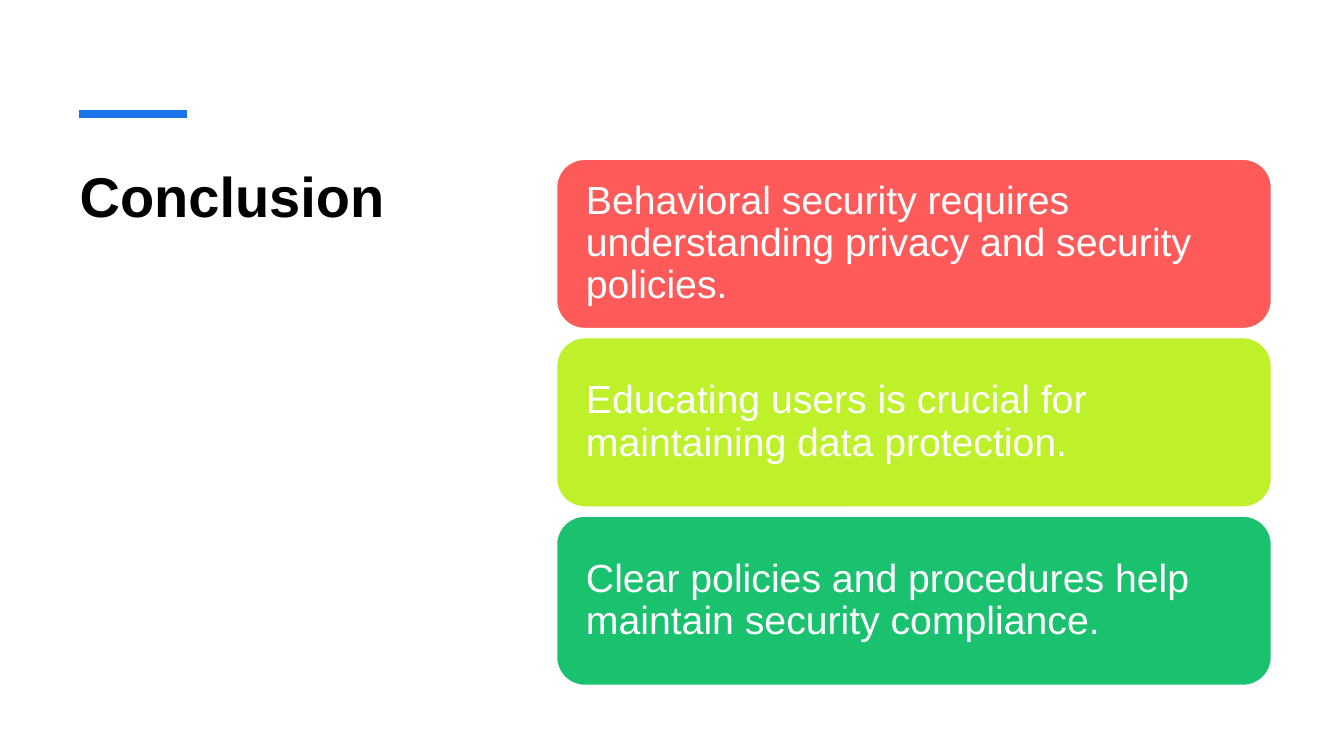
from dataclasses import dataclass
from typing import Any

from lxml import etree
from pptx import Presentation, util as u
from pptx.dml.color import RGBColor
from pptx.enum import shapes, text
from pptx.oxml import ns

WHITE = RGBColor(0xFF, 0xFF, 0xFF)
BLACK = RGBColor(0x00, 0x00, 0x00)
BLUE = RGBColor(0x19, 0x73, 0xEB)
CORAL = RGBColor(0xFE, 0x5A, 0x5A)
LIME = RGBColor(0xBE, 0xF1, 0x29)
GREEN = RGBColor(0x1A, 0xC1, 0x6E)

SLIDE_WIDTH, SLIDE_HEIGHT = u.Inches(13.33), u.Inches(7.5)

# Card column, in inches
CARD_LEFT, CARD_TOP = 5.52, 1.58
CARD_WIDTH, CARD_HEIGHT = 7.09, 1.68
CARD_STEP = 1.77

TITLE_FRAME = {
    "auto_size": text.MSO_AUTO_SIZE.NONE,
    "vertical_anchor": text.MSO_ANCHOR.TOP,
    "word_wrap": True,
    "margin_left": u.Inches(0.09),
    "margin_top": u.Inches(0.1),
}
CARD_FRAME = {
    "vertical_anchor": text.MSO_ANCHOR.MIDDLE,
    "word_wrap": True,
    "margin_left": u.Inches(0.21),
    "margin_right": u.Inches(0.21),
}
TITLE_PARA = {"alignment": text.PP_ALIGN.LEFT, "line_spacing": 1.0}
CARD_PARA = {"alignment": text.PP_ALIGN.LEFT, "line_spacing": 0.9}
TITLE_FONT = {"name": "Arial", "size": u.Pt(40), "bold": True}
CARD_FONT = {"name": "Arial", "size": u.Pt(28), "bold": False}


@dataclass(frozen=True)
class Card:
    message: str
    fill: RGBColor


CARDS = (
    Card("Behavioral security requires understanding privacy and security policies.", CORAL),
    Card("Educating users is crucial for maintaining data protection.", LIME),
    Card("Clear policies and procedures help maintain security compliance.", GREEN),
)


def apply_format(target: Any, values: dict[str, Any]) -> None:
    for name, value in values.items():
        setattr(target, name, value)


def write_text(box: Any, message: str, frame: dict[str, Any], para_format: dict[str, Any],
               font: dict[str, Any], color: RGBColor) -> None:
    apply_format(box.text_frame, frame)
    para = box.text_frame.paragraphs[0]
    apply_format(para, para_format)
    span = para.add_run()
    span.text = message
    apply_format(span.font, font)
    span.font.color.rgb = color


def add_title(page: Any) -> None:
    title = page.shapes.title
    apply_format(title, {"left": u.Inches(0.7), "top": u.Inches(1.5),
                         "width": u.Inches(4.02), "height": u.Inches(4.29)})
    write_text(title, "Conclusion", TITLE_FRAME, TITLE_PARA, TITLE_FONT, BLACK)


def add_accent(page: Any) -> None:
    height = u.Inches(1.13)
    accent = page.shapes.add_connector(
        shapes.MSO_CONNECTOR.STRAIGHT, u.Inches(0.78), height, u.Inches(1.85), height)
    accent.line.color.rgb = BLUE
    accent.line.width = u.Pt(6)
    etree.SubElement(accent._element.spPr, ns.qn("a:effectLst"))


def add_card(page: Any, row: int, card: Card) -> None:
    box = page.shapes.add_shape(
        shapes.MSO_SHAPE.ROUNDED_RECTANGLE,
        u.Inches(CARD_LEFT), u.Inches(CARD_TOP + row * CARD_STEP),
        u.Inches(CARD_WIDTH), u.Inches(CARD_HEIGHT))
    box.shadow.inherit = False
    box.fill.solid()
    box.fill.fore_color.rgb = card.fill
    box.line.color.rgb = WHITE
    box.line.width = u.Pt(1)
    write_text(box, card.message, CARD_FRAME, CARD_PARA, CARD_FONT, WHITE)


def main() -> None:
    deck = Presentation()
    apply_format(deck, {"slide_width": SLIDE_WIDTH, "slide_height": SLIDE_HEIGHT})
    page = deck.slides.add_slide(deck.slide_layouts.get_by_name("Title Only"))

    # Heading with its accent bar
    add_title(page)
    add_accent(page)

    # Stack of takeaways
    for row, card in enumerate(CARDS):
        add_card(page, row, card)

    deck.save("out.pptx")


if __name__ == "__main__":
    main()
